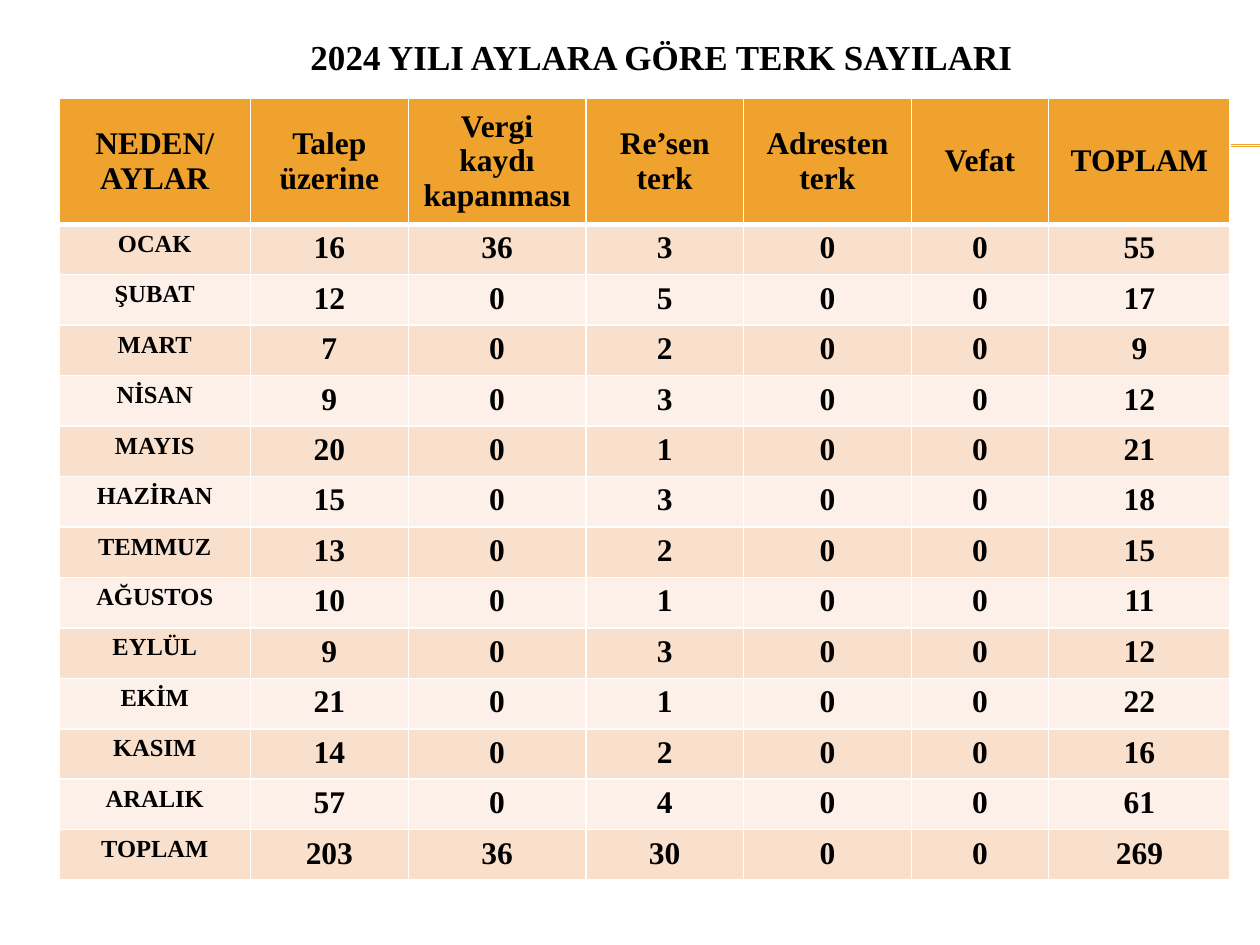
from dataclasses import dataclass

from lxml import etree
from pptx import Presentation
from pptx.dml.color import RGBColor
from pptx.enum import shapes, text
from pptx.oxml import ns
from pptx.util import Cm, Pt


@dataclass(frozen=True)
class Theme:
    font: str = "Times New Roman"
    ink: str = "000000"
    accent: str = "F0A22E"
    bands: tuple = ("F9E0CD", "FCF0E8")
    border: str = "FFFFFF"
    title_size: int = 20
    body_size: int = 18
    month_size: int = 14
    thin: int = 1
    thick: int = 3


THEME = Theme()
HEADERS = ["NEDEN/ AYLAR", "Talep üzerine", "Vergi kaydı kapanması", "Re’sen terk",
           "Adresten terk", "Vefat", "TOPLAM"]
COUNTS = {
    "OCAK": [16, 36, 3, 0, 0],
    "ŞUBAT": [12, 0, 5, 0, 0],
    "MART": [7, 0, 2, 0, 0],
    "NİSAN": [9, 0, 3, 0, 0],
    "MAYIS": [20, 0, 1, 0, 0],
    "HAZİRAN": [15, 0, 3, 0, 0],
    "TEMMUZ": [13, 0, 2, 0, 0],
    "AĞUSTOS": [10, 0, 1, 0, 0],
    "EYLÜL": [9, 0, 3, 0, 0],
    "EKİM": [21, 0, 1, 0, 0],
    "KASIM": [14, 0, 2, 0, 0],
    "ARALIK": [57, 0, 4, 0, 0],
}
COLUMN_WIDTHS = [3.86, 3.18, 3.58, 3.18, 3.38, 2.77, 3.66]
HEADER_HEIGHT, ROW_HEIGHT = 2.48, 0.99


def table_rows():
    """Header, one row a month with its sum, and the column sums."""
    totals = [sum(column) for column in zip(*COUNTS.values())]
    body = {**COUNTS, "TOPLAM": totals}
    return [HEADERS] + [[name, *values, sum(values)] for name, values in body.items()]


def write(tf, content, size):
    tf.text = str(content)
    p = tf.paragraphs[0]
    p.alignment = text.PP_ALIGN.CENTER
    font = p.runs[0].font
    font.name, font.size, font.bold = THEME.font, Pt(size), True
    font.color.rgb = RGBColor.from_string(THEME.ink)


def set_borders(cell, top, bottom):
    tc_pr = cell._tc.get_or_add_tcPr()
    widths = {"lnL": THEME.thin, "lnR": THEME.thin, "lnT": top, "lnB": bottom}
    for side, width in widths.items():
        ln = etree.SubElement(tc_pr, ns.qn(f"a:{side}"), w=str(Pt(width)))
        fill = etree.SubElement(ln, ns.qn("a:solidFill"))
        etree.SubElement(fill, ns.qn("a:srgbClr"), val=THEME.border)


def add_rules(s, left, top, width, gap):
    """Draw the double rule that runs behind the table to the slide edge."""
    for y in (top, top + gap):
        line = s.shapes.add_connector(shapes.MSO_CONNECTOR.STRAIGHT,
                                      Cm(left), Cm(y), Cm(left + width), Cm(y))
        line.line.color.rgb = RGBColor.from_string(THEME.accent)
        line.line.width = Pt(0.75)
        etree.SubElement(line._element.spPr, ns.qn("a:effectLst"))


def add_title(s, left, top, width, height):
    tf = s.shapes.add_textbox(Cm(left), Cm(top), Cm(width), Cm(height)).text_frame
    tf.word_wrap = True
    tf.margin_top = Cm(0.18)
    write(tf, "2024 YILI AYLARA GÖRE TERK SAYILARI", THEME.title_size)


def add_count_table(s, left, top):
    rows = table_rows()
    height = HEADER_HEIGHT + ROW_HEIGHT * (len(rows) - 1)
    table = s.shapes.add_table(len(rows), len(HEADERS), Cm(left), Cm(top),
                               Cm(sum(COLUMN_WIDTHS)), Cm(height)).table
    for column, width in zip(table.columns, COLUMN_WIDTHS):
        column.width = Cm(width)
    for i, values in enumerate(rows):
        is_header = i == 0
        table.rows[i].height = Cm(HEADER_HEIGHT if is_header else ROW_HEIGHT)
        color = THEME.accent if is_header else THEME.bands[(i - 1) % 2]
        for j, value in enumerate(values):
            cell = table.cell(i, j)
            is_month = j == 0 and not is_header
            write(cell.text_frame, value, THEME.month_size if is_month else THEME.body_size)
            if is_header:
                cell.vertical_anchor = text.MSO_ANCHOR.MIDDLE
            set_borders(cell, top=THEME.thick if i == 1 else THEME.thin,
                        bottom=THEME.thick if is_header else THEME.thin)
            cell.fill.solid()
            cell.fill.fore_color.rgb = RGBColor.from_string(color)


def main():
    prs = Presentation()
    prs.slide_width, prs.slide_height = Cm(25.4), Cm(19.05)
    s = prs.slides.add_slide(prs.slide_layouts[6])
    add_rules(s, left=1.42, top=2.92, width=23.98, gap=0.03)
    add_title(s, left=1.27, top=0.53, width=24.13, height=1.45)
    add_count_table(s, left=1.19, top=1.98)
    prs.save("out.pptx")


if __name__ == "__main__":
    main()
